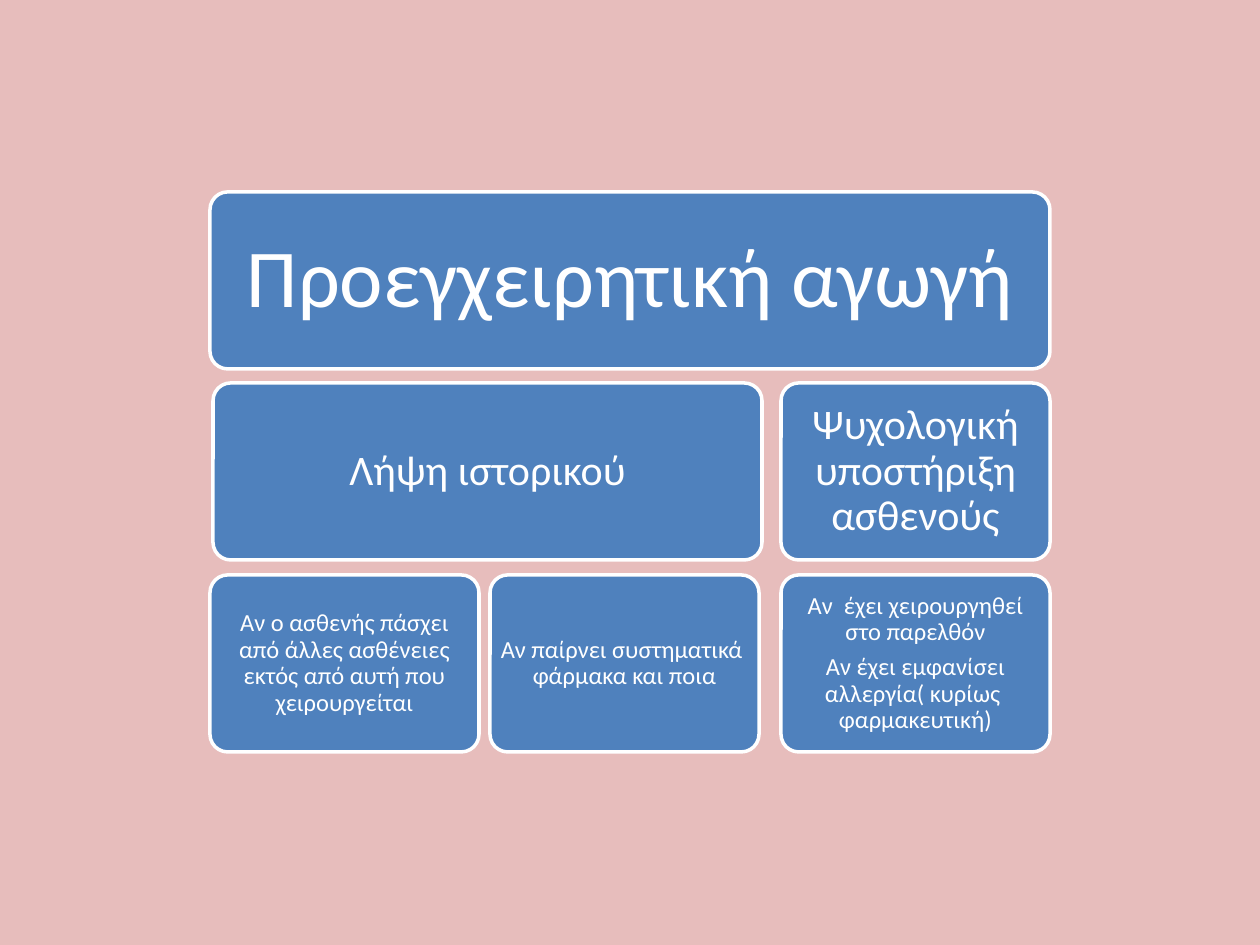
import pptx
import pptx.dml.color
import pptx.enum.shapes
import pptx.enum.text
import pptx.oxml.ns
import pptx.util
from lxml import etree

SCALE = 914400 / 126


def px(n):
    return pptx.util.Emu(round(n * SCALE))


def rgb(color):
    return pptx.dml.color.RGBColor.from_string(color)


def assign(target, values):
    for name, value in values.items():
        setattr(target, name, value)


class Deck:
    FILL, INK, FONT = "4F81BD", "FFFFFF", "Calibri"
    BACKGROUND, OPACITY = "E6B9B8", 94
    CORNER, BORDER = 0.1, 2

    def __init__(self, width, height):
        self.prs = pptx.Presentation()
        assign(self.prs, {"slide_width": px(width), "slide_height": px(height)})
        self.s = self.prs.slides.add_slide(self.prs.slide_layouts[6])

    def background(self):
        fill = self.s.background.fill
        fill.solid()
        fill.fore_color.rgb = rgb(self.BACKGROUND)
        qn = pptx.oxml.ns.qn
        color = next(self.s.element.iter(qn("a:srgbClr")))
        etree.SubElement(color, qn("a:alpha"), val=str(self.OPACITY * 1000))

    def box(self, x, y, w, h, size, inset, texts):
        kind = pptx.enum.shapes.MSO_SHAPE.ROUNDED_RECTANGLE
        sp = self.s.shapes.add_shape(kind, px(x), px(y), px(w), px(h))
        sp.adjustments[0] = self.CORNER
        sp.shadow.inherit = False
        sp.fill.solid()
        sp.fill.fore_color.rgb = rgb(self.FILL)
        sp.line.color.rgb = rgb(self.INK)
        sp.line.width = pptx.util.Pt(self.BORDER)
        tf = sp.text_frame
        assign(tf, {
            "word_wrap": True,
            "vertical_anchor": pptx.enum.text.MSO_ANCHOR.MIDDLE,
            "margin_left": px(inset), "margin_right": px(inset),
            "margin_top": px(inset), "margin_bottom": px(inset),
        })
        for i, text in enumerate(texts):
            p = tf.paragraphs[0] if i == 0 else tf.add_paragraph()
            assign(p, {
                "alignment": pptx.enum.text.PP_ALIGN.CENTER,
                "line_spacing": 0.9,
                "space_after": pptx.util.Pt(round(size * 0.35)),
            })
            r = p.add_run()
            r.text = text
            assign(r.font, {"name": self.FONT, "size": pptx.util.Pt(size)})
            r.font.color.rgb = rgb(self.INK)


def main():
    deck = Deck(1260, 945)
    deck.background()

    height, narrow = 177, 269
    left, middle, right = 210, 490, 781
    title_y, topic_y, detail_y = 192, 383, 575

    deck.box(left, title_y, 840, height, 47, 20, ["Προεγχειρητική αγωγή"])

    topics = [
        (213, 549, "Λήψη ιστορικού"),
        (right, narrow, "Ψυχολογική υποστήριξη ασθενούς"),
    ]
    for x, width, text in topics:
        deck.box(x, topic_y, width, height, 24, 8, [text])

    details = [
        (left, ["Αν ο ασθενής πάσχει από άλλες ασθένειες εκτός από αυτή που χειρουργείται"]),
        (middle, ["Αν παίρνει συστηματικά  φάρμακα και ποια"]),
        (right, ["Αν  έχει χειρουργηθεί στο παρελθόν",
                 "Αν έχει εμφανίσει αλλεργία( κυρίως  φαρμακευτική)"]),
    ]
    for x, texts in details:
        deck.box(x, detail_y, narrow, height, 14, 3, texts)

    deck.prs.save("out.pptx")


if __name__ == "__main__":
    main()
